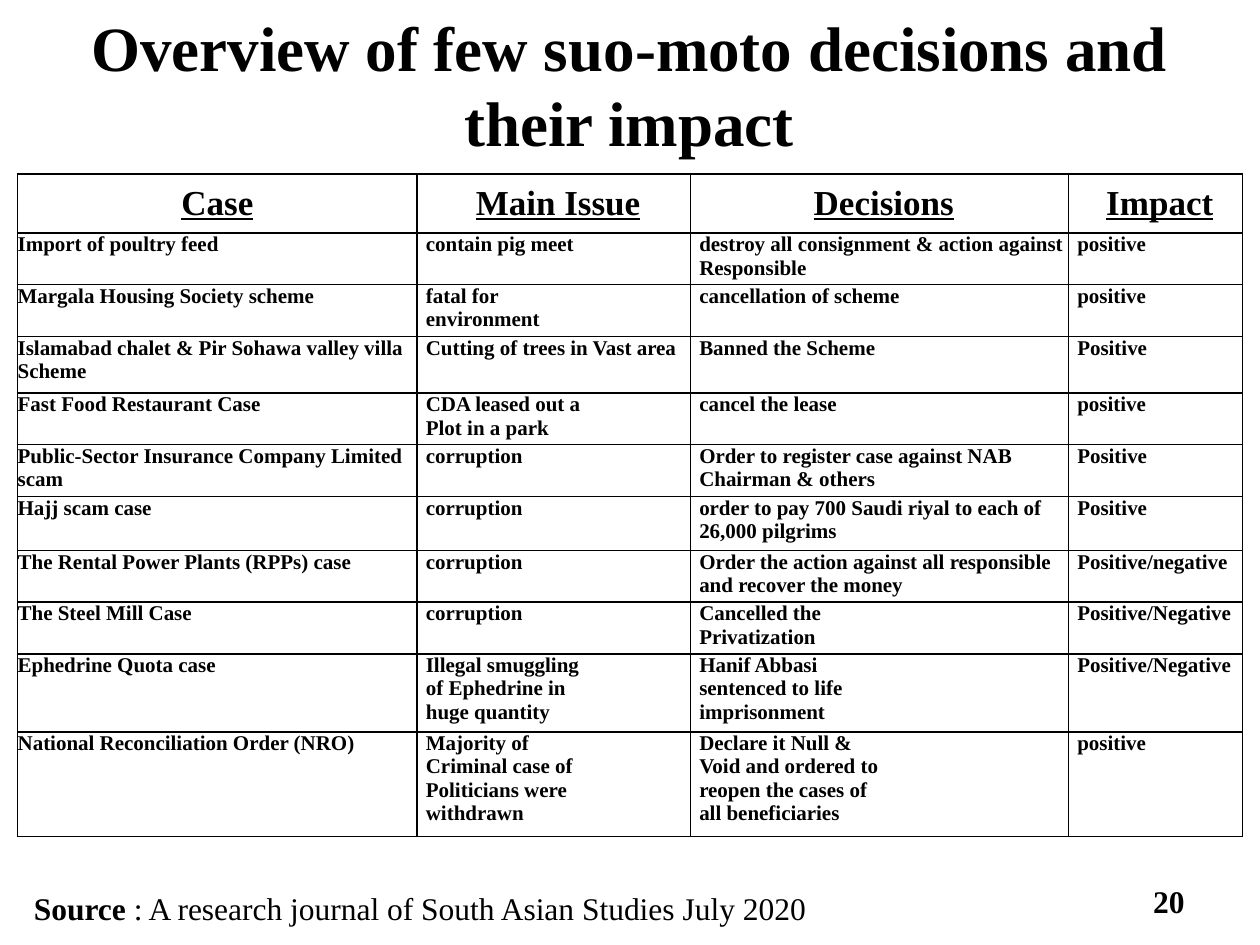
from lxml.etree import SubElement
from pptx import Presentation
from pptx.dml.color import RGBColor
from pptx.enum.text import MSO_ANCHOR as Anchor, MSO_AUTO_SIZE as AutoSize, PP_ALIGN as Align
from pptx.oxml.ns import qn
from pptx.util import Inches, Pt

COLORS = {"ink": "000000"}
FONT = "Times New Roman"
TITLE = "Overview of few suo-moto decisions and their impact"
PAGE = "20"
SOURCE = [("Source", True), (" : A research journal of South Asian Studies July 2020", False)]
HEADINGS = ("Case", "Main Issue", "Decisions", "Impact")
CASES = [
    ("Import of poultry feed", "contain pig meet",
     "destroy all consignment & action against Responsible", "positive"),
    ("Margala Housing Society scheme", "fatal for\nenvironment",
     "cancellation of scheme", "positive"),
    ("Islamabad chalet & Pir Sohawa valley villa Scheme", "Cutting of trees in Vast area",
     "Banned the Scheme", "Positive"),
    ("Fast Food Restaurant Case", "CDA leased out a\nPlot in a park",
     "cancel the lease", "positive"),
    ("Public-Sector Insurance Company Limited scam", "corruption",
     "Order to register case against NAB Chairman & others", "Positive"),
    ("Hajj scam case", "corruption",
     "order to pay 700 Saudi riyal to each of 26,000 pilgrims", "Positive"),
    ("The Rental Power Plants (RPPs) case", "corruption",
     "Order the action against all responsible and recover the money", "Positive/negative"),
    ("The Steel Mill Case", "corruption", "Cancelled the\nPrivatization", "Positive/Negative"),
    ("Ephedrine Quota case", "Illegal smuggling\nof Ephedrine in\nhuge quantity",
     "Hanif Abbasi\nsentenced to life\nimprisonment", "Positive/Negative"),
    ("National Reconciliation Order (NRO)",
     "Majority of\nCriminal case of\nPoliticians were\nwithdrawn",
     "Declare it Null &\nVoid and ordered to\nreopen the cases of\nall beneficiaries", "positive"),
]
COLUMN_WIDTHS = (3.17, 2.17, 3, 1.38)
ROW_HEIGHTS = (0.47, 0.41, 0.41, 0.45, 0.41, 0.41, 0.43, 0.41, 0.41, 0.62, 0.83)
TEXT_INDENT = 0.07


def set_all(target, values):
    for name, value in values.items():
        setattr(target, name, value)


def style(font, size, bold=True, underline=False):
    set_all(font, {"name": FONT, "size": Pt(size), "bold": bold, "underline": underline})
    font.color.rgb = RGBColor.from_string(COLORS["ink"])


def add_borders(cell):
    properties = cell._tc.get_or_add_tcPr()
    for side in ("lnL", "lnR", "lnT", "lnB"):
        line = SubElement(properties, qn(f"a:{side}"), w=str(Pt(1)))
        fill = SubElement(line, qn("a:solidFill"))
        SubElement(fill, qn("a:srgbClr"), val=COLORS["ink"])


def fill_cell(cell, text, is_heading, is_first):
    set_all(cell, {"text": text, "margin_left": 0, "margin_right": 0,
                   "margin_top": 0, "margin_bottom": 0,
                   "vertical_anchor": Anchor.MIDDLE if is_heading else Anchor.TOP})
    add_borders(cell)
    cell.fill.background()
    for paragraph in cell.text_frame.paragraphs:
        paragraph.alignment = Align.CENTER if is_heading else Align.LEFT
        if not is_first:
            paragraph._p.get_or_add_pPr().set("marL", str(Inches(TEXT_INDENT)))
        for run in paragraph.runs:
            style(run.font, 20 if is_heading else 12, underline=is_heading)


def add_text(slide, box, runs, alignment, anchor):
    frame = slide.shapes.add_textbox(*map(Inches, box)).text_frame
    set_all(frame, {"word_wrap": True, "vertical_anchor": anchor})
    paragraph = frame.paragraphs[0]
    paragraph.alignment = alignment
    for text, bold in runs:
        run = paragraph.add_run()
        run.text = text
        style(run.font, 18, bold)


def add_title(slide):
    title = slide.shapes.title
    set_all(title, {"left": Inches(0.1), "top": Inches(0.33),
                    "width": Inches(9.79), "height": Inches(0.67)})
    set_all(title.text_frame, {"text": TITLE, "word_wrap": True, "auto_size": AutoSize.NONE,
                               "vertical_anchor": Anchor.MIDDLE})
    paragraph = title.text_frame.paragraphs[0]
    set_all(paragraph, {"alignment": Align.CENTER, "line_spacing": Pt(43.2)})
    style(paragraph.runs[0].font, 36)


def add_cases(slide):
    rows = [HEADINGS, *CASES]
    box = (0.14, 1.38, sum(COLUMN_WIDTHS), sum(ROW_HEIGHTS))
    table = slide.shapes.add_table(len(rows), len(HEADINGS), *map(Inches, box)).table
    set_all(table, {"first_row": False, "horz_banding": False})
    for column, width in zip(table.columns, COLUMN_WIDTHS):
        column.width = Inches(width)
    for row, height in zip(table.rows, ROW_HEIGHTS):
        row.height = Inches(height)
    for r, texts in enumerate(rows):
        for c, text in enumerate(texts):
            fill_cell(table.cell(r, c), text, r == 0, c == 0)


def main():
    deck = Presentation()
    set_all(deck, {"slide_width": Inches(10), "slide_height": Inches(7.5)})
    slide = deck.slides.add_slide(deck.slide_layouts[5])
    add_title(slide)
    add_text(slide, (7.17, 6.95, 2.33, 0.4), [(PAGE, True)], Align.RIGHT, Anchor.MIDDLE)
    add_cases(slide)
    add_text(slide, (0.17, 7.01, 6.83, 0.4), SOURCE, Align.LEFT, Anchor.TOP)
    deck.save("out.pptx")


if __name__ == "__main__":
    main()
